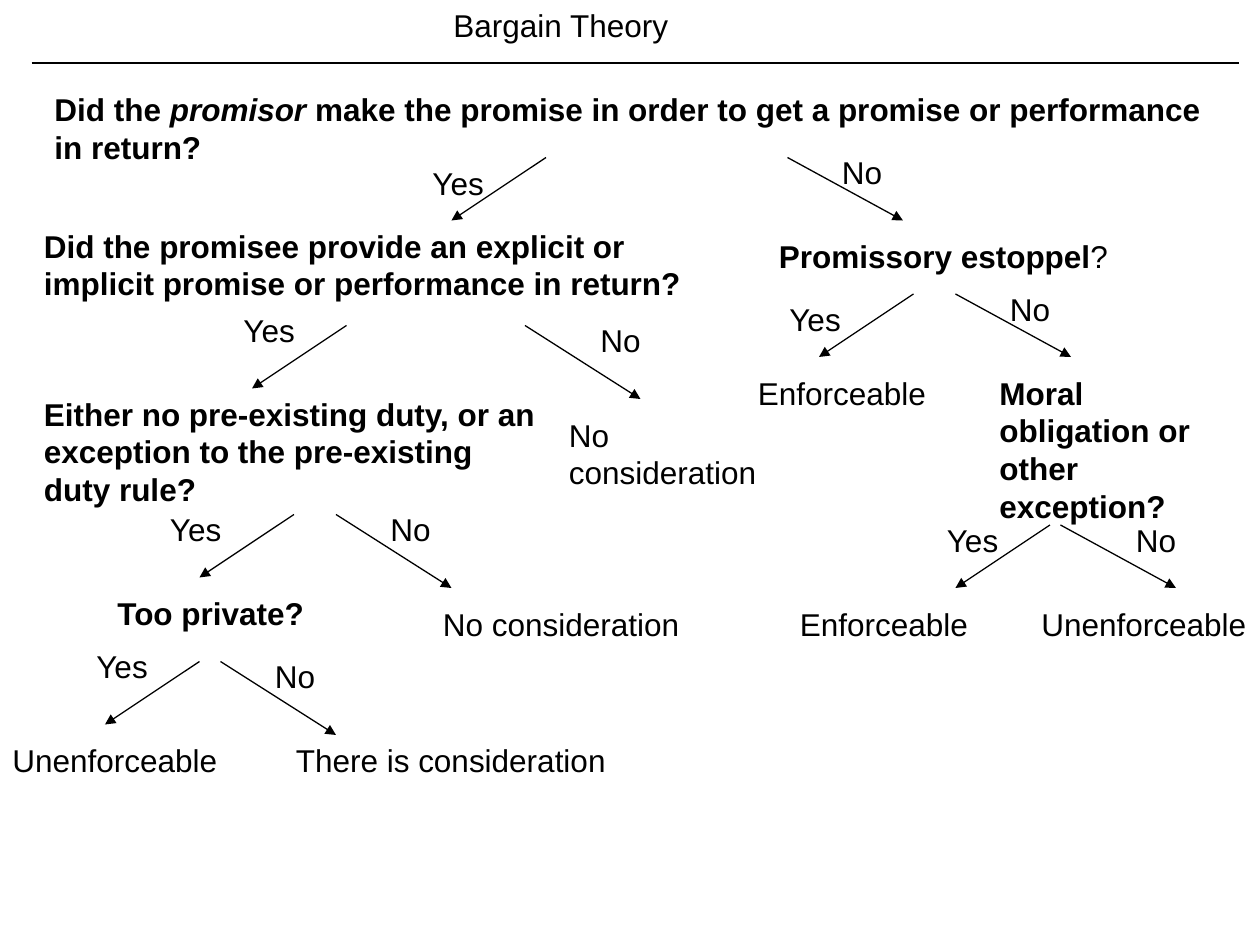
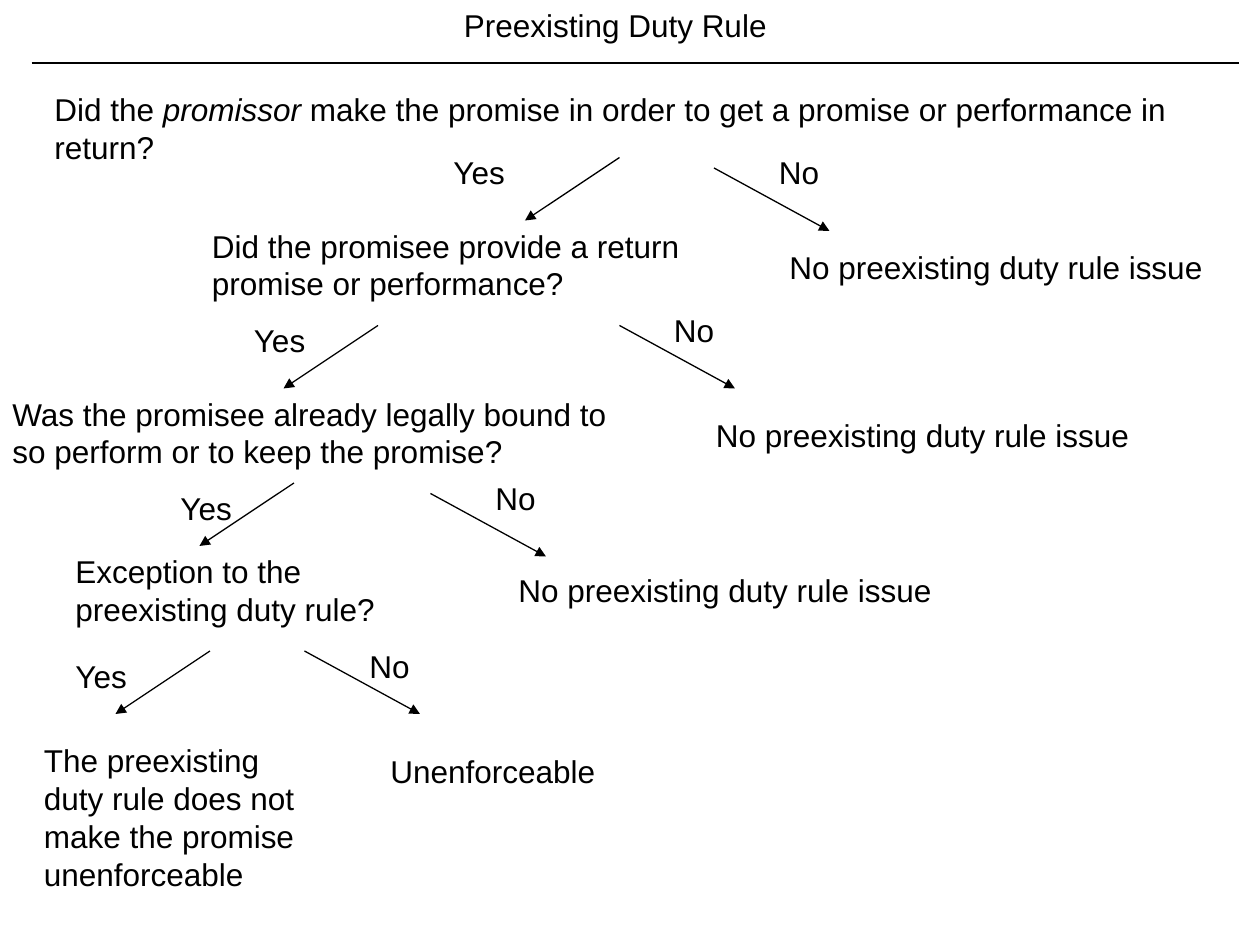
"""Build two contract-law decision trees on a grid of twelfths of an inch."""
from lxml import etree
from pptx import Presentation
from pptx.dml.color import RGBColor
from pptx.enum.shapes import MSO_CONNECTOR
from pptx.enum.text import MSO_AUTO_SIZE
from pptx.oxml.ns import qn
from pptx.util import Cm, Pt

STRAIGHT = MSO_CONNECTOR.STRAIGHT
GROW = MSO_AUTO_SIZE.SHAPE_TO_FIT_TEXT
GRID = 2.54 / 12
BLACK = RGBColor.from_string("000000")
FONT = {"name": "Arial", "size": Pt(18)}
PLAIN = {}
BOLD = {"bold": True}
ITALIC = {"italic": True}
BOLD_ITALIC = {"bold": True, "italic": True}
NO_ISSUE = [("No preexisting duty rule issue", PLAIN)]
UNENFORCEABLE = [("Unenforceable", PLAIN)]
ENFORCEABLE = [("Enforceable", PLAIN)]
NO_CONSIDERATION = [("No consideration", PLAIN)]
GOAL = " make the promise in order to get a promise or performance in return?"


def add_text(s, x, y, w, lines, runs):
    sp = s.shapes.add_textbox(*[Cm(v * GRID) for v in (x, y, w, 1.2 + 3.6 * lines)])
    tf = sp.text_frame
    tf.word_wrap = True
    tf.auto_size = GROW
    p = tf.paragraphs[0]
    for text, style in runs:
        r = p.add_run()
        r.text = text
        r.font.color.rgb = BLACK
        for key, value in {**FONT, **style}.items():
            setattr(r.font, key, value)


def add_line(s, x, y, dx, dy, arrow=True):
    ends = [Cm(v * GRID) for v in (x, y, x + dx, y + dy)]
    sp = s.shapes.add_connector(STRAIGHT, *ends)
    sp.line.color.rgb = BLACK
    sp.line.width = Pt(0.75)
    if arrow:
        ln = sp.line._get_or_add_ln()
        etree.SubElement(ln, qn("a:tailEnd"), type="triangle")
    etree.SubElement(sp._element.spPr, qn("a:effectLst"))


# Nodes: left, top, width, lines, runs.
# Branches: Yes arrow start, No arrow start, No arrow drop, Yes label, No label.
slides = [
    {
        "title": (42, 0, 31, 1, [("Bargain Theory", PLAIN)]),
        "nodes": [
            (4, 8, 112, 2, [("Did the ", BOLD), ("promisor", BOLD_ITALIC), (GOAL, BOLD)]),
            (3, 21, 68, 2, [("Did the promisee provide an explicit or implicit "
                             "promise or performance in return?", BOLD)]),
            (73, 22, 36, 1, [("Promissory estoppel", BOLD), ("?", PLAIN)]),
            (3, 37, 50, 3, [("Either no pre-existing duty, or an exception to the "
                             "pre-existing duty rule?", BOLD)]),
            (53, 39, 23, 2, NO_CONSIDERATION),
            (71, 35, 20, 1, ENFORCEABLE),
            (94, 35, 23, 4, [("Moral obligation or other exception?", BOLD)]),
            (10, 56, 21, 1, [("Too private?", BOLD)]),
            (41, 57, 30, 1, NO_CONSIDERATION),
            (75, 57, 20, 1, ENFORCEABLE),
            (98, 57, 22, 1, UNENFORCEABLE),
            (0, 70, 23, 1, UNENFORCEABLE),
            (27, 70, 53, 1, [("There is consideration", PLAIN)]),
        ],
        "branches": [
            ((52, 15), (75, 15), 6, (40, 15), (79, 14)),
            ((33, 31), (50, 31), 7, (22, 29), (56, 30)),
            ((28, 49), (32, 49), 7, (15, 48), (36, 48)),
            ((19, 63), (21, 63), 7, (8, 61), (25, 62)),
            ((87, 28), (91, 28), 6, (74, 28), (95, 27)),
            ((100, 50), (101, 50), 6, (89, 49), (107, 49)),
        ],
    },
    {
        "title": (43, 0, 43, 1, [("Preexisting Duty Rule", PLAIN)]),
        "nodes": [
            (4, 8, 112, 2, [("Did the ", PLAIN), ("promissor", ITALIC), (GOAL, PLAIN)]),
            (19, 21, 49, 2, [("Did the promisee provide a return promise or "
                              "performance?", PLAIN)]),
            (74, 23, 42, 1, NO_ISSUE),
            (0, 37, 60, 2, [("Was the promisee already legally bound to so perform "
                             "or to keep the promise?", PLAIN)]),
            (67, 39, 42, 1, NO_ISSUE),
            (6, 52, 31, 2, [("Exception to the preexisting duty rule?", PLAIN)]),
            (48.2, 53.8, 42, 1, NO_ISSUE),
            (3, 70, 29, 4, [("The preexisting duty rule does not make the promise "
                             "unenforceable", PLAIN)]),
            (36, 71, 24, 1, UNENFORCEABLE),
        ],
        "branches": [
            ((59, 15), (68, 16), 6, (42, 14), (73, 14)),
            ((36, 31), (59, 31), 6, (23, 30), (63, 29)),
            ((28, 46), (41, 47), 6, (16, 46), (46, 45)),
            ((20, 62), (29, 62), 6, (6, 62), (34, 61)),
        ],
    },
]

prs = Presentation()
prs.slide_width, prs.slide_height = Cm(25.4), Cm(19.05)

for content in slides:
    s = prs.slides.add_slide(prs.slide_layouts[6])
    add_line(s, 3, 6, 115, 0, arrow=False)
    for node in [content["title"], *content["nodes"]]:
        add_text(s, *node)
    for yes, no, drop, yes_label, no_label in content["branches"]:
        add_line(s, *yes, -9, 6)
        add_line(s, *no, 11, drop)
        add_text(s, *yes_label, 9, 1, [("Yes", PLAIN)])
        add_text(s, *no_label, 9, 1, [("No", PLAIN)])

prs.save("out.pptx")
